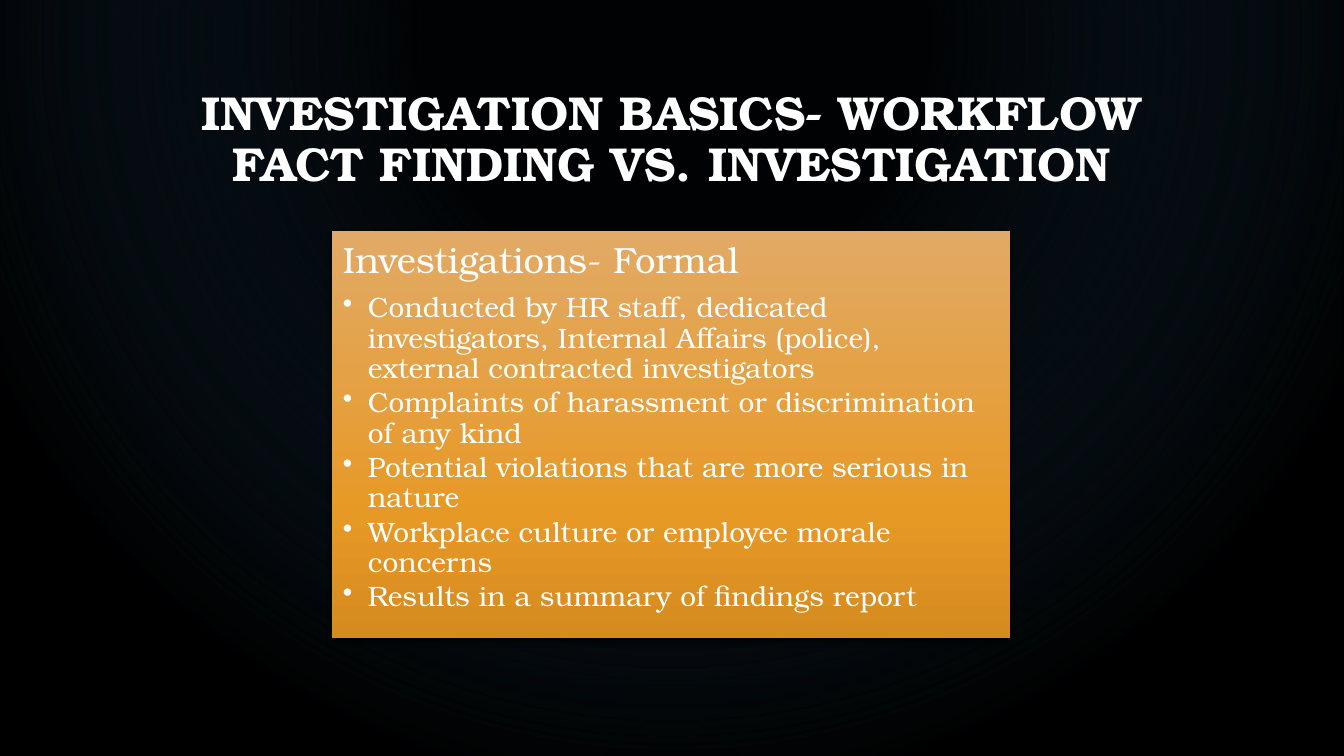
import pptx
import pptx.util
import pptx.dml.color
import pptx.enum.shapes
import pptx.enum.text
import pptx.oxml
import pptx.oxml.ns

Inches, Pt = pptx.util.Inches, pptx.util.Pt
ALIGN = pptx.enum.text.PP_ALIGN
ANCHOR = pptx.enum.text.MSO_ANCHOR
NS = pptx.oxml.ns.nsdecls("a")

# Content
TITLE = ["INVESTIGATION BASICS- WORKFLOW", "FACT FINDING VS. INVESTIGATION"]
HEADING = "Investigations- Formal"
BULLETS = [
    "Conducted by HR staff, dedicated investigators, Internal Affairs (police), "
    "external contracted investigators",
    "Complaints of harassment or discrimination of any kind",
    "Potential violations that are more serious in nature",
    "Workplace culture or employee morale concerns",
    "Results in a summary of findings report",
]
FONT = "TeX Gyre Bonum"
WIDTH, HEIGHT = 13.33, 7.5

# Gradient stops: position %, colour, opacity %
GLOW = [(32, "1F445F", 3), (100, "000000", 70)]
ORANGE = [(0, "E2AA66", 100), (69, "E79926", 100), (100, "D68B1F", 100)]
GLOW_PATH = ('<a:path path="circle">'
             '<a:fillToRect l="50000" t="5000" r="50000" b="95000"/></a:path>')
DOWNWARD = '<a:lin ang="5400000" scaled="0"/>'


def color(hex_value):
    return pptx.dml.color.RGBColor.from_string(hex_value)


def gradient_rect(s, left, top, width, height, stops, direction):
    sp = s.shapes.add_shape(pptx.enum.shapes.MSO_SHAPE.RECTANGLE, Inches(left),
                            Inches(top), Inches(width), Inches(height))
    sp.shadow.inherit = False
    sp.line.fill.background()
    sp.fill.background()
    gs = "".join(f'<a:gs pos="{pos * 1000}"><a:srgbClr val="{c}">'
                 f'<a:alpha val="{opacity * 1000}"/></a:srgbClr></a:gs>'
                 for pos, c, opacity in stops)
    grad = pptx.oxml.parse_xml(f'<a:gradFill {NS} rotWithShape="1">'
                               f'<a:gsLst>{gs}</a:gsLst>{direction}</a:gradFill>')
    spPr = sp.element.spPr
    spPr.replace(spPr.find(pptx.oxml.ns.qn("a:noFill")), grad)
    return sp


def add_run(p, text, size, bold=False):
    r = p.add_run()
    r.text = text
    r.font.name, r.font.size, r.font.bold = FONT, Pt(size), bold
    r.font.color.rgb = color("FFFFFF")


prs = pptx.Presentation()
prs.slide_width, prs.slide_height = Inches(WIDTH), Inches(HEIGHT)
s = prs.slides.add_slide(prs.slide_layouts[6])

# Background with a faint blue glow
s.background.fill.solid()
s.background.fill.fore_color.rgb = color("000000")
gradient_rect(s, 0, 0, WIDTH, HEIGHT, GLOW, GLOW_PATH)

# Title
tf = s.shapes.add_textbox(Inches(1), Inches(0.67), Inches(11.32), Inches(1.45)).text_frame
tf.word_wrap = True
tf.vertical_anchor = ANCHOR.MIDDLE
p = tf.paragraphs[0]
p.alignment, p.line_spacing = ALIGN.CENTER, 0.9
for i, line in enumerate(TITLE):
    if i:
        p.add_line_break()
    add_run(p, line, 34, bold=True)

# Orange panel with a soft shadow
panel = gradient_rect(s, 3.29, 2.29, 6.73, 4.04, ORANGE, DOWNWARD)
effects = panel.element.spPr.find(pptx.oxml.ns.qn("a:effectLst"))
effects.append(pptx.oxml.parse_xml(
    f'<a:outerShdw {NS} blurRad="{Pt(4)}" dist="{Pt(3)}" dir="5400000" rotWithShape="0">'
    '<a:srgbClr val="000000"><a:alpha val="54000"/></a:srgbClr></a:outerShdw>'))

# Panel text
tf = panel.text_frame
tf.word_wrap = True
tf.vertical_anchor = ANCHOR.TOP
tf.margin_left = tf.margin_top = tf.margin_right = tf.margin_bottom = Inches(0.11)
p = tf.paragraphs[0]
p.alignment, p.line_spacing, p.space_after = ALIGN.LEFT, 0.9, Pt(9)
add_run(p, HEADING, 26)
for text in BULLETS:
    p = tf.add_paragraph()
    p.alignment, p.line_spacing, p.space_after = ALIGN.LEFT, 0.9, Pt(3)
    p.level = 1
    pPr = p._p.get_or_add_pPr()
    pPr.set("marL", str(Inches(0.25)))
    pPr.set("indent", str(-Inches(0.25)))
    pPr.append(pptx.oxml.parse_xml(f'<a:buChar {NS} char="•"/>'))
    add_run(p, text, 20)

prs.save("out.pptx")
